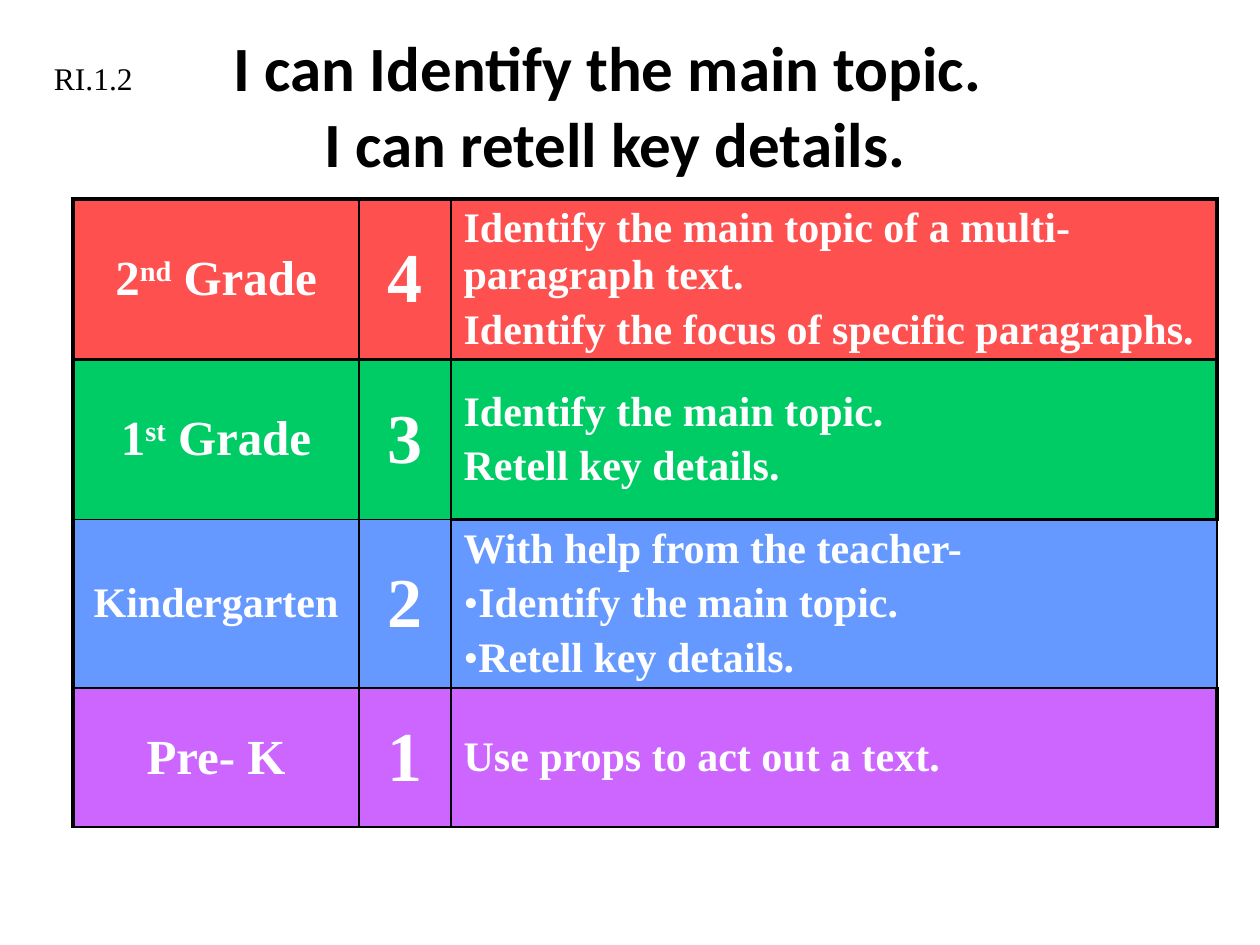
from lxml import etree
from pptx import Presentation
from pptx.dml.color import RGBColor
from pptx.enum import text
from pptx.oxml.ns import qn
from pptx.util import Inches, Pt

COLORS = {
    "ink": "000000", "white": "FFFFFF", "red": "FF5050",
    "green": "00CC66", "blue": "6699FF", "purple": "CC66FF",
}
COLUMNS = [2.27, 0.73, 6.08]
# Grade as (text, superscript, rest), its size, score, skills, fill, row height,
# then border widths (left, top, right, bottom) for each cell.
LEVELS = [
    (("2", "nd", " Grade"), 28, "4",
     ["Identify the main topic of a multi-paragraph text.",
      "Identify the focus of specific paragraphs."], "red", 1.27,
     [(2.25, 2.25, 1, 1.5), (1, 2.25, 1, 1.5), (1, 2.25, 2.25, 1.5)]),
    (("1", "st", " Grade"), 28, "3",
     ["Identify the main topic.", "Retell key details."], "green", 1.27,
     [(2.25, 1.5, 1, 1), (1, 1.5, 1, 1), (1, 1.5, 2.25, 1.5)]),
    (("Kindergarten",), 24, "2",
     ["With help from the teacher-", "•Identify the main topic.",
      "•Retell key details."], "blue", 1.34,
     [(2.25, 1, 1.5, 1), (1.5, 1, 1.5, 1), (1.5, 1.5, 1.5, 1.5)]),
    (("Pre- K",), 28, "1",
     ["Use props to act out a text."], "purple", 1.1,
     [(2.25, 1, 1, 1.5), (1, 1, 1, 1.5), (1, 1.5, 2.25, 1.5)]),
]


class SlideBuilder:
    """Holds the style and the current slide."""
    heading_font = "Calibri"
    body_font = "Times New Roman"

    def __init__(self, slide):
        self.slide = slide

    def color(self, name):
        return RGBColor.from_string(COLORS[name])

    def format_runs(self, p, size, color, font, bold=False):
        for r in p.runs:
            r.font.size = Pt(size)
            r.font.name = font
            r.font.bold = bold
            r.font.color.rgb = self.color(color)

    def title(self, wording, left, top, width, height):
        sp = self.slide.shapes.title
        sp.left, sp.top, sp.width, sp.height = map(Inches, (left, top, width, height))
        tf = sp.text_frame
        tf.text = wording
        tf.auto_size = text.MSO_AUTO_SIZE.NONE
        tf.vertical_anchor = text.MSO_ANCHOR.MIDDLE
        p = tf.paragraphs[0]
        p.alignment = text.PP_ALIGN.CENTER
        self.format_runs(p, 36, "ink", self.heading_font, True)

    def label(self, wording, left, top, width, height):
        sp = self.slide.shapes.add_textbox(*map(Inches, (left, top, width, height)))
        tf = sp.text_frame
        tf.word_wrap = True
        tf.text = wording
        self.format_runs(tf.paragraphs[0], 18, "ink", self.body_font)

    def table(self, levels, columns, left, top):
        heights = [level[5] for level in levels]
        frame = self.slide.shapes.add_table(
            len(levels), len(columns),
            *map(Inches, (left, top, sum(columns), sum(heights))))
        table = frame.table
        table.first_row = table.horz_banding = False
        for column, width in zip(table.columns, columns):
            column.width = Inches(width)
        for row, level in zip(table.rows, levels):
            grade, grade_size, score, skills, fill, height, borders = level
            row.height = Inches(height)
            contents = [([grade], grade_size, True), ([(score,)], 40, True),
                        ([(skill,) for skill in skills], 24, False)]
            for cell, content, widths in zip(row.cells, contents, borders):
                self.cell(cell, *content, fill, widths)

    def cell(self, cell, lines, size, centred, fill, widths):
        self.borders(cell, widths)
        cell.fill.solid()
        cell.fill.fore_color.rgb = self.color(fill)
        cell.vertical_anchor = text.MSO_ANCHOR.MIDDLE
        tf = cell.text_frame
        for i, parts in enumerate(lines):
            p = tf.paragraphs[0] if i == 0 else tf.add_paragraph()
            p.alignment = text.PP_ALIGN.CENTER if centred else text.PP_ALIGN.LEFT
            p.space_before = Pt(size * 0.2)
            if parts[0].startswith("•"):
                self.bullet(p)
            for part in parts:
                p.add_run().text = part.lstrip("•")
            self.format_runs(p, size, "white", self.body_font, True)
            if len(parts) > 1:
                p.runs[1]._r.get_or_add_rPr().set("baseline", "30000")

    def bullet(self, p):
        pPr = p._p.get_or_add_pPr()
        pPr.set("marL", "0")
        pPr.set("indent", "0")
        etree.SubElement(pPr, qn("a:buFont")).set("typeface", self.body_font)
        etree.SubElement(pPr, qn("a:buChar")).set("char", "•")

    def borders(self, cell, widths):
        tcPr = cell._tc.get_or_add_tcPr()
        for side, width in zip("LTRB", widths):
            # The schema wants the sides in the order left, right, top, bottom.
            ln = etree.Element(qn(f"a:ln{side}"), w=str(Pt(width)))
            solid = etree.SubElement(ln, qn("a:solidFill"))
            etree.SubElement(solid, qn("a:srgbClr")).set("val", COLORS["ink"])
            tcPr.insert("LRTB".index(side), ln)
        tcPr[:] = sorted(tcPr, key=lambda ln: "LRTB".index(ln.tag[-1]))


def main():
    prs = Presentation()
    prs.slide_width, prs.slide_height = Inches(10), Inches(7.5)
    s = SlideBuilder(prs.slides.add_slide(prs.slide_layouts[5]))
    s.title("I can Identify the main topic. \vI can retell key details.",
            0.17, 0.33, 9.42, 1)
    s.table(LEVELS, COLUMNS, 0.58, 1.58)
    s.label("RI.1.2", 0.33, 0.42, 1.42, 0.4)
    prs.save("out.pptx")


if __name__ == "__main__":
    main()
